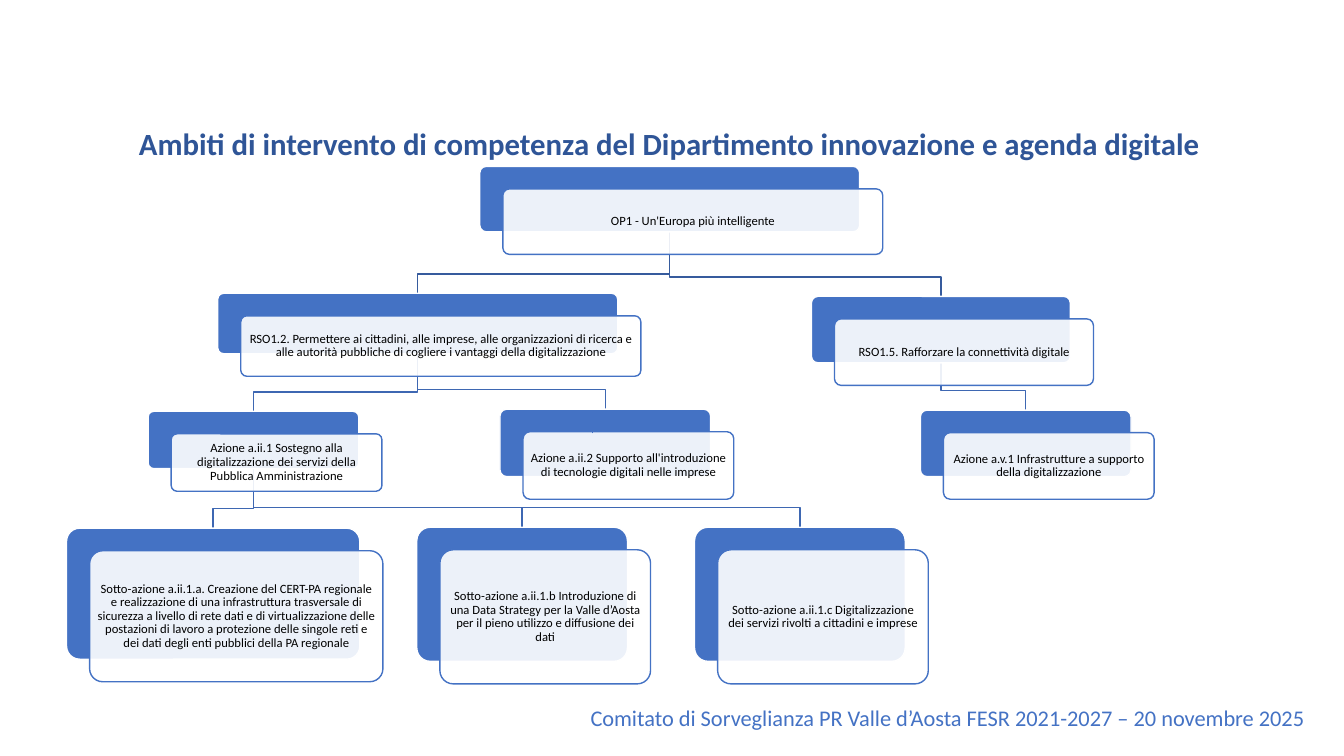
import pptx
import pptx.dml.color
import pptx.enum.shapes
import pptx.enum.text
import pptx.oxml
import pptx.oxml.ns
import pptx.util

Pt = pptx.util.Pt
SHAPES = pptx.enum.shapes.MSO_SHAPE
ALIGN = pptx.enum.text.PP_ALIGN
ANCHOR = pptx.enum.text.MSO_ANCHOR
FONT, BLUE, NAVY, WHITE, BLACK = "Calibri", "4472C4", "2F5597", "FFFFFF", "000000"
SHIFT_X, SHIFT_Y, BEND = 16.5, 16.1, 13.9

NODES = {
    "op1": (295.2, 0, 271.4, 46.8, None, "OP1 - Un'Europa più intelligente"),
    "rso12": (108, 90.7, 285.8, 43.2, "op1",
              "RSO1.2. Permettere ai cittadini, alle imprese, alle organizzazioni di ricerca e "
              "alle autorità pubbliche di cogliere i vantaggi della digitalizzazione"),
    "rso15": (532.1, 92.9, 185, 47.5, "op1", "RSO1.5. Rafforzare la connettività digitale"),
    "aii1": (58.3, 175, 150.5, 41, "rso12",
             "Azione a.ii.1 Sostegno alla digitalizzazione dei servizi della "
             "Pubblica Amministrazione"),
    "aii2": (309.6, 173.5, 150.5, 48.2, "rso12",
             "Azione a.ii.2 Supporto all'introduzione di tecnologie digitali nelle imprese"),
    "av1": (609.9, 174.2, 150.5, 47.5, "rso15",
            "Azione a.v.1 Infrastrutture a supporto della digitalizzazione"),
    "aii1a": (0, 258.5, 209.5, 93.6, "aii1",
              "Sotto-azione a.ii.1.a. Creazione del CERT-PA regionale e realizzazione di una "
              "infrastruttura trasversale di sicurezza a livello di rete dati e di "
              "virtualizzazione delle postazioni di lavoro a protezione delle singole reti e "
              "dei dati degli enti pubblici della PA regionale"),
    "aii1b": (250.2, 257.8, 150.5, 95.8, "aii1",
              "Sotto-azione a.ii.1.b Introduzione di una Data Strategy per la Valle d’Aosta "
              "per il pieno utilizzo e diffusione dei dati"),
    "aii1c": (448.6, 257.8, 150.5, 95.8, "aii1",
              "Sotto-azione a.ii.1.c Digitalizzazione dei servizi rivolti a cittadini e imprese"),
}


def rgb(value):
    """Turn a hex string into a colour."""
    return pptx.dml.color.RGBColor.from_string(value)


def write(tf, text, size, color, align, bold=False):
    """Put one formatted run in the first paragraph."""
    p = tf.paragraphs[0]
    p.alignment = align
    r = p.add_run()
    r.text = text
    r.font.name, r.font.size, r.font.bold = FONT, Pt(size), bold
    r.font.color.rgb = rgb(color)
    return p


def stroke(line, color, width):
    """Colour and size a line."""
    line.color.rgb = rgb(color)
    line.width = Pt(width)


def title(s, x, y, w, h):
    """Fill and place the title placeholder."""
    sp = s.shapes.title
    sp.left, sp.top, sp.width, sp.height = Pt(x), Pt(y), Pt(w), Pt(h)
    tf = sp.text_frame
    tf.auto_size = pptx.enum.text.MSO_AUTO_SIZE.NONE
    tf.vertical_anchor = ANCHOR.TOP
    write(tf, "Ambiti di intervento di competenza del Dipartimento innovazione e agenda digitale",
          22, NAVY, ALIGN.CENTER, True)


def footer(s, x, y, w, h):
    """Add the meeting name and date."""
    tf = s.shapes.add_textbox(Pt(x), Pt(y), Pt(w), Pt(h)).text_frame
    tf.word_wrap = True
    write(tf, "Comitato di Sorveglianza PR Valle d’Aosta FESR 2021-2027 – 20 novembre 2025",
          16, BLUE, ALIGN.LEFT)


def branch(s, parent, child, color):
    """Draw the bent line from a parent card to a child card."""
    px, py, pw, ph = parent
    cx, cy, cw, ch = child
    start, end, bend = px + pw / 2, cx + cw / 2, cy - BEND
    builder = s.shapes.build_freeform(Pt(start), Pt(py + ph))
    builder.add_line_segments([(Pt(start), Pt(bend)), (Pt(end), Pt(bend)), (Pt(end), Pt(cy))],
                              close=False)
    sp = builder.convert_to_shape()
    sp.shadow.inherit = False
    sp.fill.background()
    stroke(sp.line, color, 1)


def rounded(s, x, y, w, h, fill, line):
    """Add one rounded rectangle."""
    sp = s.shapes.add_shape(SHAPES.ROUNDED_RECTANGLE, Pt(x), Pt(y), Pt(w), Pt(h))
    sp.adjustments[0] = 0.1
    sp.shadow.inherit = False
    sp.fill.solid()
    sp.fill.fore_color.rgb = rgb(fill)
    stroke(sp.line, line, 1)
    return sp


def card(s, x, y, w, h, text):
    """Add a blue plate with a translucent text card in front."""
    rounded(s, x, y, w, h, BLUE, WHITE)
    sp = rounded(s, x + SHIFT_X, y + SHIFT_Y, w, h, WHITE, BLUE)
    color = sp.fill._xPr.find(".//" + pptx.oxml.ns.qn("a:srgbClr"))
    color.append(pptx.oxml.parse_xml(
        f'<a:alpha {pptx.oxml.ns.nsdecls("a")} val="90000"/>'))
    tf = sp.text_frame
    tf.word_wrap = True
    tf.vertical_anchor = ANCHOR.MIDDLE
    tf.margin_left = tf.margin_right = tf.margin_top = tf.margin_bottom = Pt(2.7)
    write(tf, text, 9, BLACK, ALIGN.CENTER).line_spacing = 0.9


def tick(s, x, y, h):
    """Add a short upright line."""
    sp = s.shapes.add_connector(pptx.enum.shapes.MSO_CONNECTOR.STRAIGHT,
                                Pt(x), Pt(y + h), Pt(x), Pt(y))
    stroke(sp.line, BLUE, 0.5)
    sp._element.spPr.append(pptx.oxml.parse_xml(
        f'<a:effectLst {pptx.oxml.ns.nsdecls("a")}/>'))


def tree(s, x, y):
    """Draw the branches, then the cards, from the given corner."""
    boxes = {key: (x + dx, y + dy, w, h) for key, (dx, dy, w, h, *_) in NODES.items()}
    for key, (*_, parent, text) in NODES.items():
        if parent:
            branch(s, boxes[parent], boxes[key], "365B9D" if parent == "op1" else "3E67B2")
    for key, (*_, text) in NODES.items():
        card(s, *boxes[key], text)
    tick(s, x + 375.9, y + 186.5, 4.3)


def main():
    """Build and save the slide."""
    prs = pptx.Presentation()
    prs.slide_width, prs.slide_height = Pt(960), Pt(540)
    s = prs.slides.add_slide(prs.slide_layouts[5])
    footer(s, 414.7, 499.7, 531.4, 26.6)
    title(s, 66.2, 85.7, 823.7, 33.8)
    tree(s, 47.5, 118.8)
    prs.save("out.pptx")


if __name__ == "__main__":
    main()
